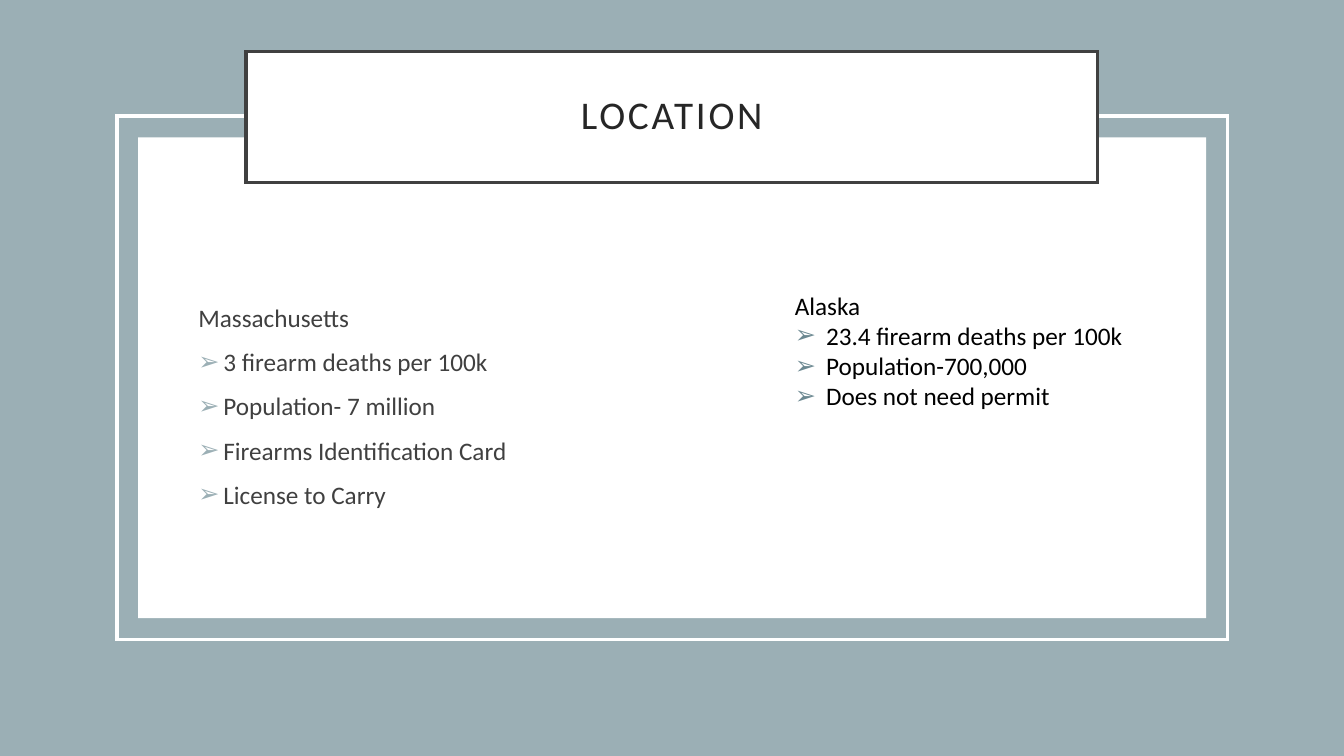
from dataclasses import dataclass

from lxml import etree
from pptx import Presentation
from pptx.dml.color import RGBColor
from pptx.enum.shapes import MSO_SHAPE
from pptx.enum.text import MSO_ANCHOR, MSO_AUTO_SIZE, PP_ALIGN
from pptx.oxml.ns import qn
from pptx.util import Cm, Pt

RECT = MSO_SHAPE.RECTANGLE
MIDDLE = MSO_ANCHOR.MIDDLE
CENTER = PP_ALIGN.CENTER
NO_FIT = MSO_AUTO_SIZE.NONE
TITLE_ONLY = 5


@dataclass(frozen=True)
class Theme:
    """Colours, font and type sizes of the slide."""
    font: str = "Calibri"
    title_size: int = 28
    body_size: int = 18
    line: float = 2.5
    backdrop: str = "9BAFB5"
    paper: str = "FFFFFF"
    border: str = "404040"
    title: str = "262626"
    body: str = "404040"
    dark: str = "000000"
    accent: str = "6B8891"


T = Theme()


def rgb(color):
    """Turn a hex string into a colour."""
    return RGBColor.from_string(color)


def write(p, text, size=T.body_size, color=T.body, spacing=0):
    """Add a formatted run to a paragraph; spacing is in points."""
    r = p.add_run()
    r.text = text
    r.font.name = T.font
    r.font.size = Pt(size)
    r.font.color.rgb = rgb(color)
    if spacing:
        r.font._element.set("spc", str(spacing * 100))


def add_bullet(p, indent, color):
    """Give a paragraph an arrow bullet with a hanging indent in cm."""
    pPr = p._p.get_or_add_pPr()
    pPr.set("marL", str(Cm(indent)))
    pPr.set("indent", str(-Cm(indent)))
    clr = etree.SubElement(pPr, qn("a:buClr"))
    etree.SubElement(clr, qn("a:srgbClr"), val=color)
    etree.SubElement(pPr, qn("a:buFont"), typeface=T.font)
    etree.SubElement(pPr, qn("a:buChar"), char="➢")


def paint(sp, fill=None, line=None):
    """Set a shape's fill and its outline with square corners."""
    if fill:
        sp.fill.solid()
        sp.fill.fore_color.rgb = rgb(fill)
    else:
        sp.fill.background()
    if line:
        sp.line.color.rgb = rgb(line)
        sp.line.width = Pt(T.line)
        ln = sp.line._get_or_add_ln()
        etree.SubElement(ln, qn("a:miter"), lim="800000")
    else:
        sp.line.fill.background()


def add_panel(s, x, y, w, h, **colors):
    """Draw a rectangle with an optional fill and outline."""
    sp = s.shapes.add_shape(RECT, Cm(x), Cm(y), Cm(w), Cm(h))
    sp.shadow.inherit = False
    paint(sp, **colors)


def add_frame(s, x, y, w, h, gap=0.53):
    """Draw the white page and the outline that runs around it."""
    add_panel(s, x, y, w, h, fill=T.paper)
    add_panel(s, x - gap, y - gap, w + 2 * gap, h + 2 * gap, line=T.paper)


def add_title(s, x, y, w, h, text):
    """Place the title placeholder as a bordered plate above the frame."""
    sp = s.shapes.title
    s.shapes._spTree.append(sp._element)
    sp.left, sp.top, sp.width, sp.height = Cm(x), Cm(y), Cm(w), Cm(h)
    paint(sp, fill=T.paper, line=T.border)
    tf = sp.text_frame
    tf.auto_size = NO_FIT
    tf.word_wrap = True
    tf.vertical_anchor = MIDDLE
    tf.margin_left = tf.margin_right = tf.margin_top = tf.margin_bottom = Cm(0.5)
    p = tf.paragraphs[0]
    p.alignment = CENTER
    p.line_spacing = 0.9
    write(p, text, size=T.title_size, color=T.title, spacing=2)


def add_state(s, x, y, w, h, name, facts, color=T.body, bullet=T.accent,
              indent=0.79, gap=0):
    """Write a state's name and a bulleted list of its facts."""
    tf = s.shapes.add_textbox(Cm(x), Cm(y), Cm(w), Cm(h)).text_frame
    tf.word_wrap = True
    write(tf.paragraphs[0], name, color=color)
    for fact in facts:
        p = tf.add_paragraph()
        p.space_before = Pt(gap)
        add_bullet(p, indent, bullet)
        write(p, fact, color=color)


def main():
    """Build the slide and save it."""
    prs = Presentation()
    prs.slide_width, prs.slide_height = Cm(33.87), Cm(19.05)
    s = prs.slides.add_slide(prs.slide_layouts[TITLE_ONLY])
    s.background.fill.solid()
    s.background.fill.fore_color.rgb = rgb(T.backdrop)
    add_frame(s, 3.48, 3.46, 26.92, 12.12)
    add_title(s, 6.2, 1.3, 21.46, 3.3, "LOCATION")
    add_state(s, 4.75, 7.49, 14, 6.9, "Massachusetts",
              ["3 firearm deaths per 100k", "Population- 7 million",
               "Firearms Identification Card", "License to Carry"],
              bullet=T.backdrop, indent=0.63, gap=10)
    add_state(s, 19.78, 7.18, 8.92, 4.1, "Alaska",
              ["23.4 firearm deaths per 100k", "Population-700,000",
               "Does not need permit"], color=T.dark)
    prs.save("out.pptx")


if __name__ == "__main__":
    main()
